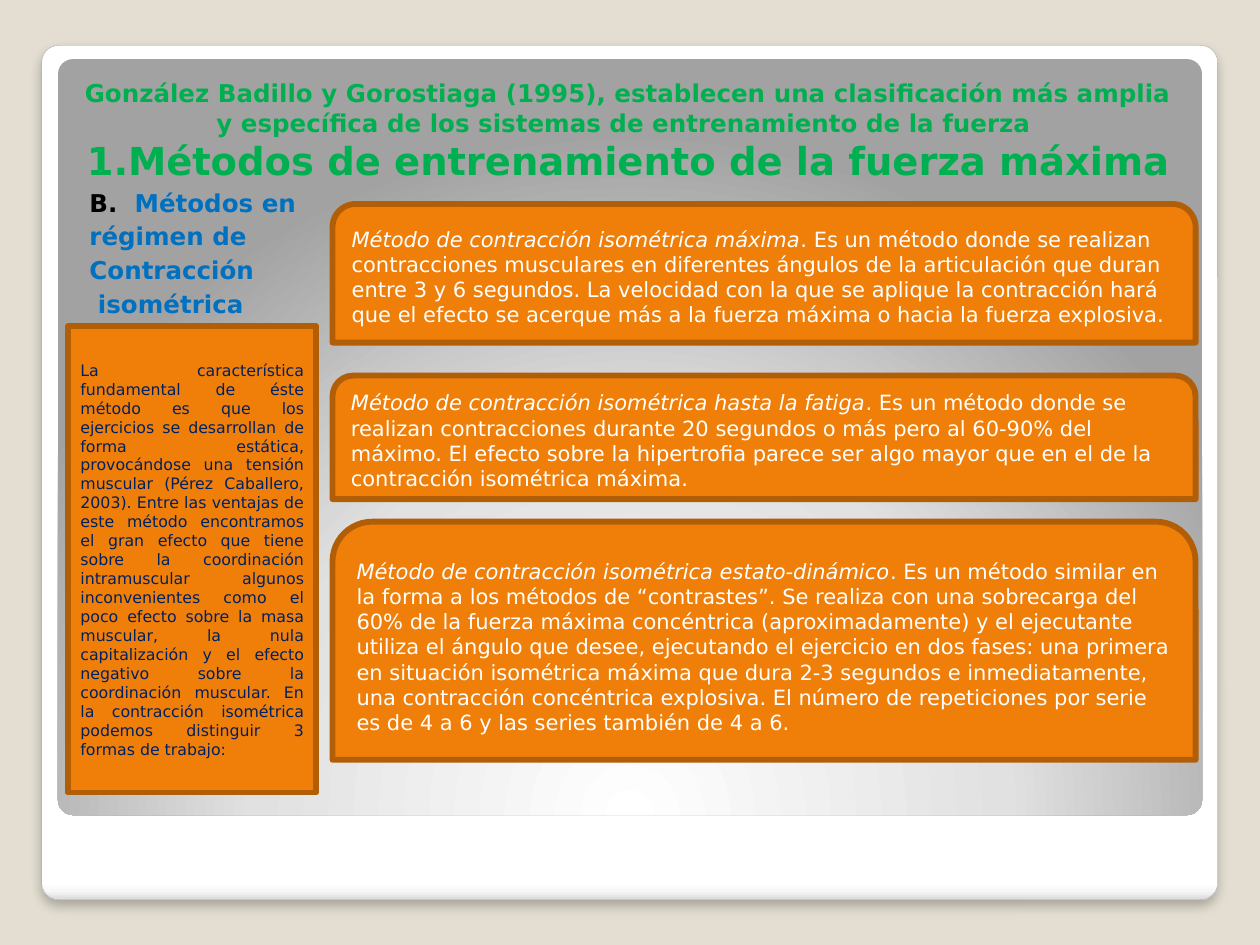
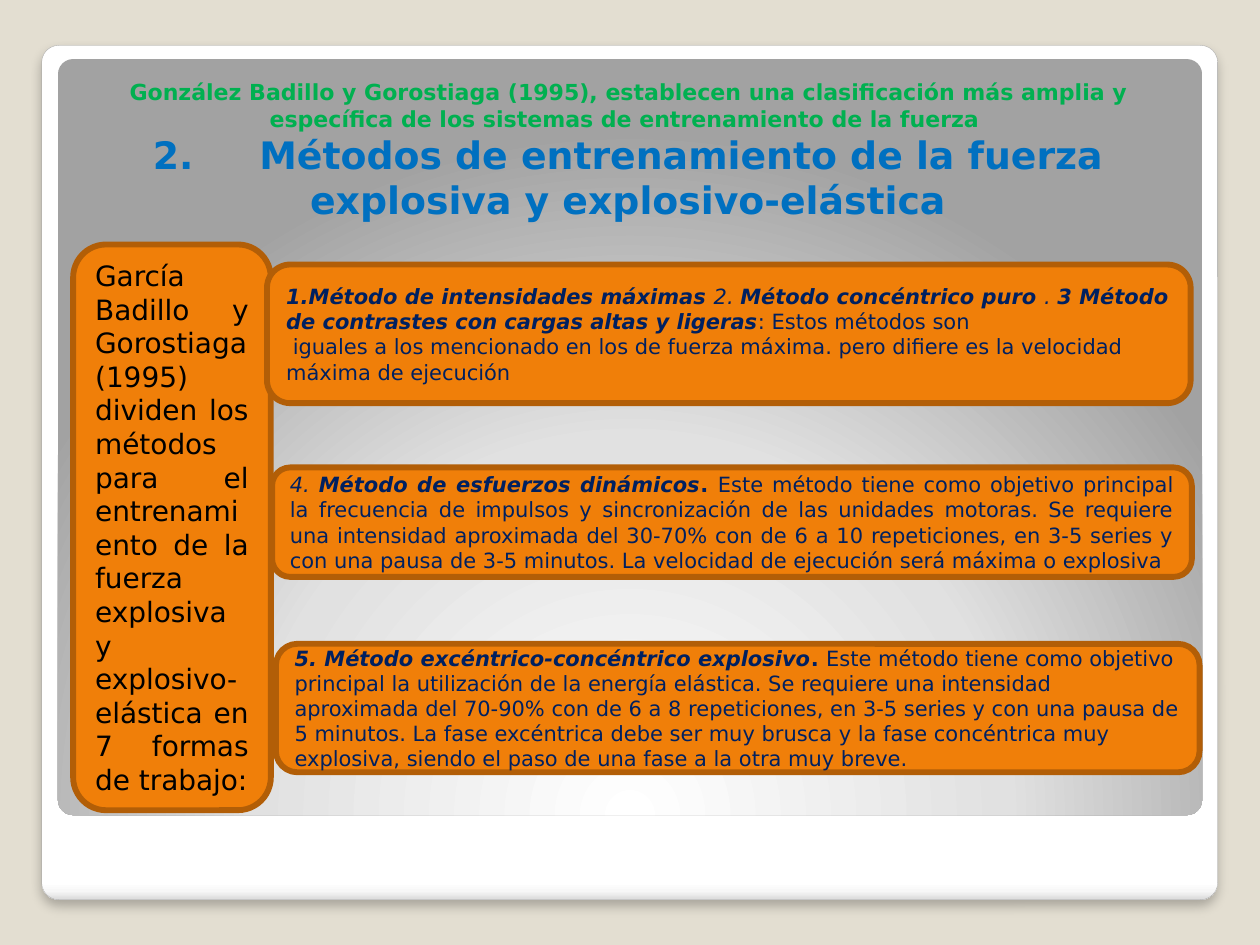
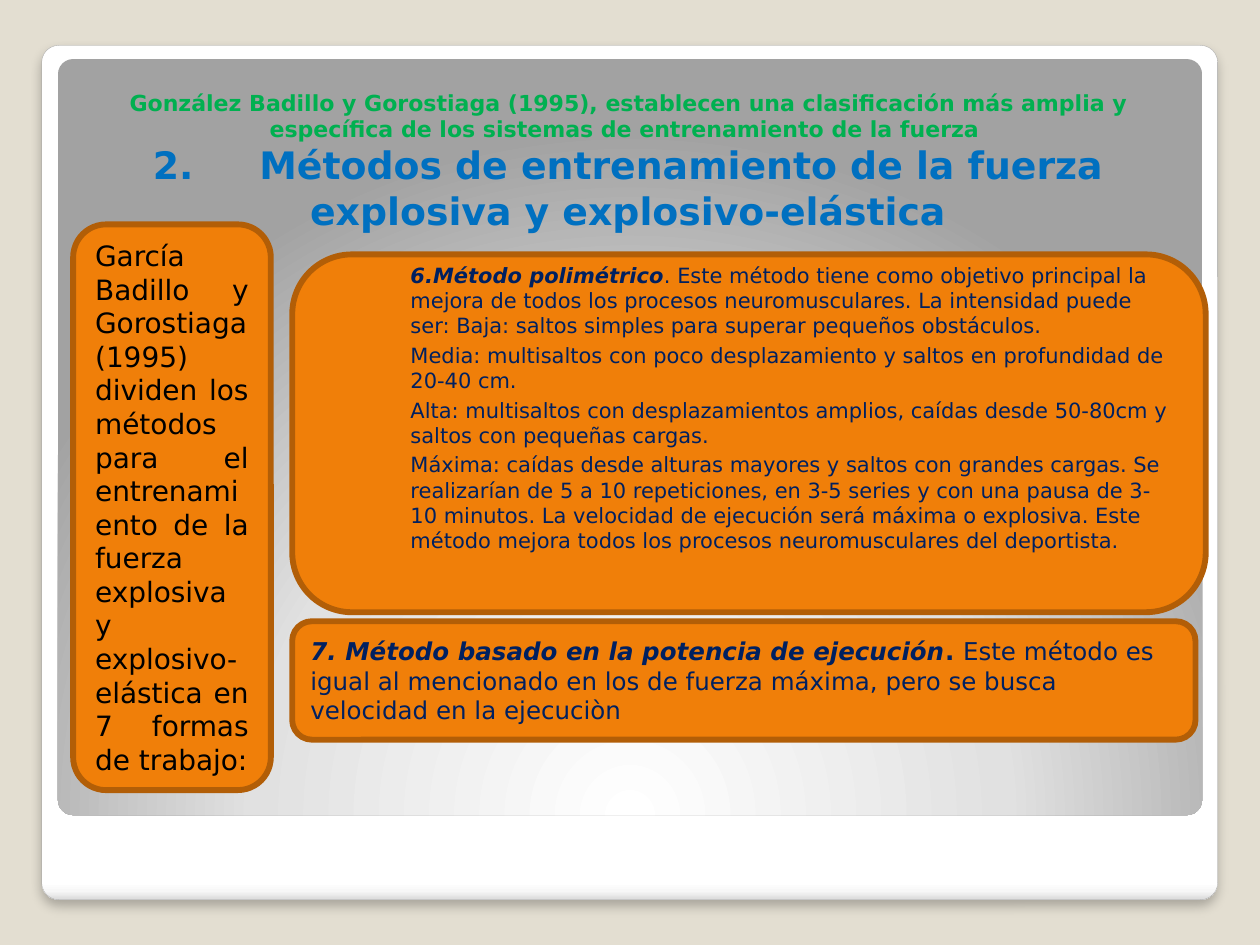
from pptx import Presentation
from pptx.dml.color import RGBColor
from pptx.enum import shapes, text
from pptx.oxml import parse_xml
from pptx.oxml import ns
from pptx.util import Pt

BACKGROUND = RGBColor(0xE3, 0xDE, 0xD1)
FRAME_LINE = RGBColor(0xA4, 0xA4, 0xA4)
ORANGE = RGBColor(0xF0, 0x7F, 0x09)
BROWN = RGBColor(0xB2, 0x5E, 0x07)
GREEN = RGBColor(0x00, 0xB0, 0x50)
BLUE = RGBColor(0x00, 0x70, 0xC0)
NAVY = RGBColor(0x00, 0x20, 0x60)
BLACK = RGBColor(0x00, 0x00, 0x00)
WHITE = RGBColor(0xFF, 0xFF, 0xFF)
FONT = "DejaVu Sans"

RECTANGLE = shapes.MSO_SHAPE.RECTANGLE
ROUNDED = shapes.MSO_SHAPE.ROUNDED_RECTANGLE
TOP_ROUNDED = shapes.MSO_SHAPE.ROUND_2_SAME_RECTANGLE
LEFT = text.PP_ALIGN.LEFT
CENTER = text.PP_ALIGN.CENTER
JUSTIFY = text.PP_ALIGN.JUSTIFY

SOURCE = (
    "González Badillo y Gorostiaga (1995), establecen una clasificación más amplia "
    "y específica de los sistemas de entrenamiento de la fuerza "
)
MAXIMUM_FORCE = "1.Métodos de entrenamiento de la fuerza máxima"
EXPLOSIVE_FORCE = "2.     Métodos de entrenamiento de la fuerza explosiva y explosivo-elástica"
SIDEBAR = [[(
    "García Badillo y Gorostiaga (1995) dividen los métodos para el entrenamiento "
    "de la fuerza explosiva y explosivo-elástica en 7 formas de trabajo:", "")]]

TITLE_LEFT, TITLE_WIDTH = 36.7, 644.4
SIDEBAR_LEFT, SIDEBAR_WIDTH, SIDEBAR_HEIGHT = 41.8, 113, 323.3
METHOD_LEFT, METHOD_WIDTH = 190, 493.2

ISOMETRIC_HEADING = [
    [("B.  ", "b", BLACK), ("Métodos en", "b")],
    [("régimen de", "b")],
    [("Contracción", "b")],
    [(" isométrica", "b")],
]
ISOMETRIC_SUMMARY = [[(
    "La característica fundamental de éste método es que los ejercicios se desarrollan "
    "de forma estática, provocándose una tensión muscular (Pérez Caballero, 2003). Entre "
    "las ventajas de este método encontramos el gran efecto que tiene sobre la "
    "coordinación intramuscular algunos inconvenientes como el poco efecto sobre la masa "
    "muscular, la nula capitalización y el efecto negativo sobre la coordinación "
    "muscular. En la contracción isométrica podemos distinguir 3 formas de trabajo:", "")]]
ISOMETRIC_METHODS = [
    (116.6, 79.2, "Método de contracción isométrica máxima",
     ". Es un método donde se realizan contracciones musculares en diferentes ángulos de "
     "la articulación que duran entre 3 y 6 segundos. La velocidad con la que se aplique "
     "la contracción hará que el efecto se acerque más a la fuerza máxima o hacia la "
     "fuerza explosiva."),
    (214.6, 70.6, "Método de contracción isométrica hasta la fatiga",
     ". Es un método donde se realizan contracciones durante 20 segundos o más pero al "
     "60-90% del máximo. El efecto sobre la hipertrofia parece ser algo mayor que en el "
     "de la contracción isométrica máxima."),
    (298.1, 136.1, "Método de contracción isométrica estato-dinámico",
     ". Es un método similar en la forma a los métodos de “contrastes”. Se realiza con "
     "una sobrecarga del 60% de la fuerza máxima concéntrica (aproximadamente) y el "
     "ejecutante utiliza el ángulo que desee, ejecutando el ejercicio en dos fases: una "
     "primera en situación isométrica máxima que dura 2-3 segundos e inmediatamente, una "
     "contracción concéntrica explosiva. El número de repeticiones por serie es de 4 a 6 "
     "y las series también de 4 a 6."),
]

EXPLOSIVE_METHODS = [
    ((157.7, 367.9, 527.8, 73.4), LEFT, [[
        ("5. Método excéntrico-concéntrico explosivo", "bi"),
        (". ", "b"),
        ("Este método tiene como objetivo principal la utilización de la energía "
         "elástica. Se requiere una intensidad aproximada del 70-90% con de 6 a 8 "
         "repeticiones, en 3-5 series y con una pausa de 5 minutos. La fase excéntrica "
         "debe ser muy brusca y la fase concéntrica muy explosiva, siendo el paso de una "
         "fase a la otra muy breve.", "")]]),
    ((155.5, 267.1, 525.6, 62.6), JUSTIFY, [[
        ("4. ", "i"),
        ("Método de esfuerzos dinámicos", "bi"),
        (". ", "b"),
        ("Este método tiene como objetivo principal la frecuencia de impulsos y "
         "sincronización de las unidades motoras. Se requiere una intensidad aproximada "
         "del 30-70% con de 6 a 10 repeticiones, en 3-5 series y con una pausa de 3-5 "
         "minutos. La velocidad de ejecución será máxima o explosiva", "")]]),
    ((152.6, 151.2, 527.8, 79.2), LEFT, [
        [("1.Método de intensidades máximas ", "bi"),
         ("2. ", "i"),
         ("Método concéntrico puro ", "bi"),
         (". ", "i"),
         ("3 Método de contrastes con cargas altas y ligeras", "bi"),
         (": Estos métodos son", "")],
        [(" iguales a los mencionado en los de fuerza máxima. pero difiere es la "
          "velocidad máxima de ejecución", "")]]),
]

PLYOMETRIC = [
    [("6.Método polimétrico", "bi"),
     (". Este método tiene como objetivo principal la mejora de todos los procesos "
      "neuromusculares. La intensidad puede ser: Baja: saltos simples para superar "
      "pequeños obstáculos.", "")],
    [("Media: multisaltos con poco desplazamiento y saltos en profundidad de 20-40 cm.", "")],
    [("Alta: multisaltos con desplazamientos amplios, caídas desde 50-80cm y saltos con "
      "pequeñas cargas.", "")],
    [("Máxima: caídas desde alturas mayores y saltos con grandes cargas. Se realizarían "
      "de 5 a 10 repeticiones, en 3-5 series y con una pausa de 3-10 minutos. La "
      "velocidad de ejecución será máxima o explosiva. Este método mejora todos los "
      "procesos neuromusculares del deportista.", "")],
]
POWER = [[
    ("7. Método basado en la potencia de ejecución", "bi"),
    (". ", "b"),
    ("Este método es igual al mencionado en los de fuerza máxima, pero se busca "
     "velocidad en la ejecuciòn", "")]]

FRAME_STOPS = [(0, "FFFFFF"), (98, "FFFFFF"), (99, "F7F7F7"), (100, "DADADA")]
PANEL_STOPS = [(0, "FFFFFF"), (55, "E1E1E1"), (100, "A2A2A2")]
FRAME_DIRECTION = '<a:lin ang="5400000" scaled="0"/>'
PANEL_DIRECTION = (
    '<a:path path="circle"><a:fillToRect l="50000" t="175000" r="50000" b="-75000"/></a:path>'
)


def drawing(tag, attributes="", content=""):
    return parse_xml(f'<a:{tag} {ns.nsdecls("a")} {attributes}>{content}</a:{tag}>')


def write_text(shape, paragraphs, size=12, color=NAVY, align=LEFT, anchor=text.MSO_ANCHOR.MIDDLE,
               margins=(7.2, 3.6, 7.2, 3.6), space_before=0, indent=None, level=0):
    frame = shape.text_frame
    frame.word_wrap = True
    frame.auto_size = text.MSO_AUTO_SIZE.NONE
    frame.vertical_anchor = anchor
    frame.margin_left, frame.margin_top, frame.margin_right, frame.margin_bottom = map(Pt, margins)
    for index, runs in enumerate(paragraphs):
        paragraph = frame.add_paragraph() if index else frame.paragraphs[0]
        paragraph.alignment = align
        paragraph.space_before = Pt(space_before)
        paragraph.level = level
        if indent is not None:
            properties = paragraph._p.get_or_add_pPr()
            properties.set("marL", str(Pt(indent)))
            properties.set("indent", "0")
            properties.append(drawing("buNone"))
        for content, style, *special in runs:
            run = paragraph.add_run()
            run.text = content
            font = run.font
            font.name = FONT
            font.bold, font.italic = "b" in style, "i" in style
            font.color.rgb = special[0] if special else color
            font.size = Pt(special[1] if len(special) > 1 else size)


def place(shape, bounds):
    shape.left, shape.top, shape.width, shape.height = map(Pt, bounds)


def paint_box(shape):
    shape.fill.solid()
    shape.fill.fore_color.rgb = ORANGE
    shape.line.color.rgb = BROWN
    shape.line.width = Pt(3.35)


def add_box(slide, kind, bounds, paragraphs, **format):
    shape = slide.shapes.add_shape(kind, *map(Pt, bounds))
    shape.shadow.inherit = False
    paint_box(shape)
    write_text(shape, paragraphs, **format)


def add_sidebar(slide, top):
    add_box(slide, ROUNDED, (SIDEBAR_LEFT, top, SIDEBAR_WIDTH, SIDEBAR_HEIGHT), SIDEBAR,
            size=16, color=BLACK, align=JUSTIFY)


def set_title(slide, top, height, heading, heading_color, heading_size, source_size):
    title = slide.shapes.title
    place(title, (TITLE_LEFT, top, TITLE_WIDTH, height))
    write_text(title, [[(SOURCE, "b", GREEN, source_size)],
                       [(heading, "b", heading_color, heading_size)]],
               align=CENTER, anchor=text.MSO_ANCHOR.BOTTOM, margins=(7.2, 3.6, 7.2, 29))


def set_explosive_title(slide, top):
    set_title(slide, top, 113, EXPLOSIVE_FORCE, BLUE, 21.6, 12.6)


def add_panel(slide, bounds, stops, direction):
    shape = slide.shapes.add_shape(ROUNDED, *map(Pt, bounds))
    shape.adjustments[0] = 0.02
    colors = "".join(f'<a:gs pos="{position * 1000}"><a:srgbClr val="{color}"/></a:gs>'
                     for position, color in stops)
    shape.element.spPr.append(
        drawing("gradFill", 'rotWithShape="1"', f"<a:gsLst>{colors}</a:gsLst>{direction}"))
    shape.line.fill.background()
    shape.shadow.inherit = False
    return shape


def set_master(presentation, slide):
    master = presentation.slide_master
    master.background.fill.solid()
    master.background.fill.fore_color.rgb = BACKGROUND
    frame = add_panel(slide, (23.8, 25.9, 672, 488.2), FRAME_STOPS, FRAME_DIRECTION)
    frame.line.color.rgb = FRAME_LINE
    frame.line.width = Pt(0.16)
    frame.element.spPr.find(ns.qn("a:effectLst")).append(drawing(
        "outerShdw", f'blurRad="{Pt(6)}" dist="{Pt(4)}" dir="5400000" algn="t" rotWithShape="0"',
        '<a:srgbClr val="000000"><a:alpha val="25000"/></a:srgbClr>'))
    panel = add_panel(slide, (33.1, 33.8, 653.8, 432), PANEL_STOPS, PANEL_DIRECTION)
    for index, shape in enumerate((frame, panel)):
        shape.element.nvSpPr.cNvPr.set("id", str(101 + index))
        master.shapes.element.insert(2 + index, shape.element)


def build_isometric(slide):
    set_title(slide, 37.4, 96.5, MAXIMUM_FORCE, GREEN, 22, 14)
    body = slide.placeholders[1]
    place(body, (TITLE_LEFT, 100, TITLE_WIDTH, 352))
    write_text(body, ISOMETRIC_HEADING, size=14, color=BLUE, anchor=text.MSO_ANCHOR.TOP,
               margins=(14.4, 7.2, 7.2, 3.6), space_before=2.5, indent=0)
    add_box(slide, RECTANGLE, (38.9, 186.5, 141.8, 266.4), ISOMETRIC_SUMMARY,
            size=9, align=JUSTIFY)
    for top, height, name, description in ISOMETRIC_METHODS:
        add_box(slide, TOP_ROUNDED, (METHOD_LEFT, top, METHOD_WIDTH, height),
                [[(name, "i"), (description, "")]], color=WHITE)


def build_explosive(slide):
    set_explosive_title(slide, 43.2)
    add_sidebar(slide, 139.7)
    for bounds, align, paragraphs in EXPLOSIVE_METHODS:
        add_box(slide, ROUNDED, bounds, paragraphs, align=align)


def build_plyometric(slide):
    set_explosive_title(slide, 49)
    body = slide.placeholders[1]
    place(body, (167, 145.4, 522, 204.5))
    body.element.spPr.append(drawing("prstGeom", 'prst="roundRect"', "<a:avLst/>"))
    paint_box(body)
    write_text(body, PLYOMETRIC, margins=(14.4, 7.2, 7.2, 36.5), space_before=2.5,
               indent=43.2, level=1)
    add_sidebar(slide, 128.2)
    add_box(slide, ROUNDED, (167, 355, 516.2, 67.7), POWER, size=14)


def main():
    presentation = Presentation()
    presentation.slide_width, presentation.slide_height = Pt(720), Pt(540)
    title_and_body, title_only = presentation.slide_layouts[1], presentation.slide_layouts[5]
    for layout, build in ((title_and_body, build_isometric), (title_only, build_explosive),
                          (title_and_body, build_plyometric)):
        slide = presentation.slides.add_slide(layout)
        if build is build_isometric:
            set_master(presentation, slide)
        build(slide)
    presentation.save("out.pptx")


if __name__ == "__main__":
    main()
